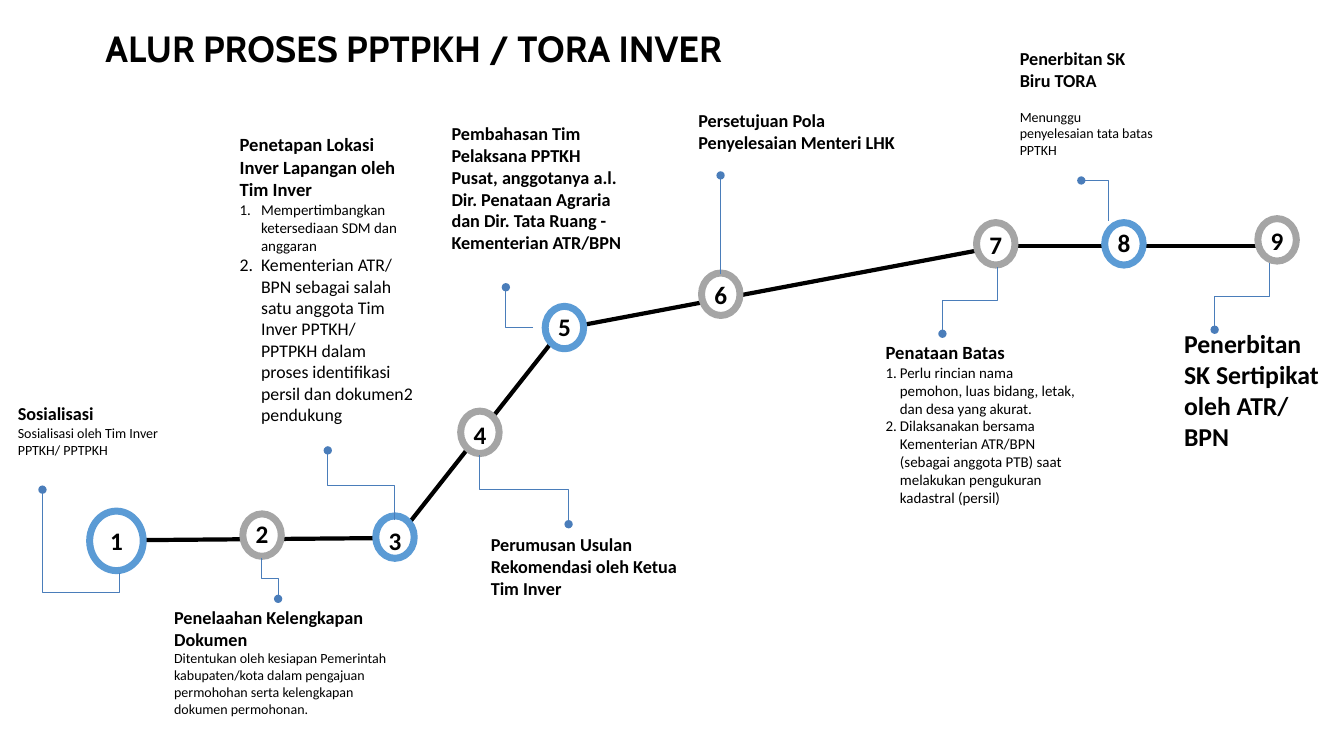
from dataclasses import dataclass
from typing import Optional

from lxml.etree import SubElement
from pptx import Presentation
from pptx.dml.color import RGBColor
from pptx.enum.shapes import MSO_CONNECTOR as Link, MSO_SHAPE as Preset
from pptx.enum.text import MSO_ANCHOR as Anchor, MSO_AUTO_SIZE as AutoSize, PP_ALIGN as Align
from pptx.oxml.ns import qn
from pptx.util import Cm, Pt

COLOURS = {"white": "FFFFFF", "black": "000000", "blue": "5B9BD5",
           "grey": "A5A5A5", "leader": "4A7DBA"}
TITLE_FRAME = {"word_wrap": True, "vertical_anchor": Anchor.MIDDLE,
               "margin_left": Cm(0.18), "margin_right": Cm(0.18),
               "margin_top": Cm(0.1), "margin_bottom": Cm(0.1)}
NOTE_FRAME = {"word_wrap": True, "auto_size": AutoSize.SHAPE_TO_FIT_TEXT,
              "margin_left": Cm(0.25), "margin_right": Cm(0.25),
              "margin_top": Cm(0.13), "margin_bottom": Cm(0.13)}
LABEL_WIDTH, LABEL_HEIGHT = 1.65, 1.04


@dataclass
class Line:
    text: str
    size: float = 13
    bold: bool = True
    indent: float = 0
    before: float = 0


@dataclass
class Leader:
    x1: float
    y1: float
    x2: float
    y2: float
    kind: str = "bentConnector3"
    bend: float = 0.5
    upright: bool = True


@dataclass
class Step:
    left: float
    top: float
    drop: float
    colour: str
    leader: Leader
    note_box: tuple[float, float, float, float]
    note: list[Line]
    width: float = 0.97
    height: float = 1.07


def detail(text: str, size: float = 10, indent: float = 0, before: float = 0) -> Line:
    return Line(text, size, False, indent, before)


ROUTE = [(25.1, 6.2, 32.13, 6.2), (3.61, 13.61, 9.47, 13.56),
         (14.2, 8.28, 24.59, 6.32), (10.31, 13.18, 13.89, 8.64)]

STEPS = [
    Step(2.26, 12.88, 0.23, "blue", Leader(3.02, 14.45, 1.07, 12.34, bend=-0.224),
         (0.2, 10.01, 4.93, 2.08),
         [Line("Sosialisasi"), detail("Sosialisasi oleh Tim Inver PPTKH/ PPTPKH")],
         width=1.35, height=1.5),
    Step(6.12, 12.95, -0.03, "grey", Leader(6.6, 14.05, 7.01, 15.09),
         (4.14, 15.14, 6.3, 3.23),
         [Line("Penelaahan Kelengkapan Dokumen"),
          detail("Ditentukan oleh kesiapan Pemerintah kabupaten/kota dalam pengajuan "
                 "permohohan serta kelengkapan dokumen permohonan.")]),
    Step(9.47, 13, 0.1, "blue", Leader(9.93, 13.11, 8.26, 11.35),
         (5.79, 3.23, 4.93, 8.13),
         [Line("Penetapan Lokasi Inver Lapangan oleh Tim Inver", 13.3),
          detail("Mempertimbangkan ketersediaan SDM dan anggaran", 10.7, 0.54),
          detail("Kementerian ATR/ BPN sebagai salah satu anggota Tim Inver PPTKH/ PPTPKH "
                 "dalam proses identifikasi persil dan dokumen2 pendukung", 12.7, 0.54)]),
    Step(11.61, 10.36, 0.08, "grey", Leader(12.09, 11.46, 14.33, 13.21),
         (12.12, 13.31, 5.38, 1.96),
         [Line("Perumusan Usulan Rekomendasi oleh Ketua Tim Inver")]),
    Step(13.74, 7.72, 0, "blue",
         Leader(13.44, 8.26, 12.75, 7.24, "bentConnector2", upright=False),
         (11.13, 2.95, 4.93, 3.68),
         [Line("Pembahasan Tim Pelaksana PPTKH Pusat, anggotanya a.l. Dir. Penataan "
               "Agraria dan Dir. Tata Ruang - Kementerian ATR/BPN")]),
    Step(17.68, 6.88, 0.03, "grey", Leader(18.16, 6.91, 18.16, 4.42),
         (17.35, 2.62, 5.77, 1.4),
         [Line("Persetujuan Pola Penyelesaian Menteri LHK")]),
    Step(24.61, 5.61, 0.03, "grey", Leader(25.15, 6.73, 23.75, 8.41),
         (22.07, 8.46, 5.36, 5.46),
         [Line("Penataan Batas", 13.3),
          detail("Perlu rincian nama pemohon, luas bidang, letak, dan desa yang akurat.",
                 10.7, 0.36),
          detail("Dilaksanakan bersama Kementerian ATR/BPN (sebagai anggota PTB) saat "
                 "melakukan pengukuran kadastral (persil)", 10.7, 0.36)]),
    Step(27.84, 5.61, 0, "blue", Leader(27.94, 5.56, 27.25, 4.55, "bentConnector2"),
         (25.45, 1.07, 3.91, 3.23),
         [Line("Penerbitan SK Biru TORA"),
          detail("Menunggu penyelesaian tata batas PPTKH", before=12)]),
    Step(31.7, 5.51, 0.03, "grey", Leader(32, 6.63, 30.61, 8.31),
         (29.59, 8.13, 3.91, 3.4),
         [Line("Penerbitan SK Sertipikat oleh ATR/ BPN", 18.4)]),
]


def rgb(name: str) -> RGBColor:
    return RGBColor.from_string(COLOURS[name])


def apply(target, values: dict) -> None:
    for name, value in values.items():
        setattr(target, name, value)


def write(frame, lines: list[Line], settings: dict, align=Align.LEFT, face="Calibri") -> None:
    apply(frame, settings)
    for index, line in enumerate(lines):
        paragraph = frame.add_paragraph() if index else frame.paragraphs[0]
        paragraph.alignment = align
        if line.before:
            paragraph.space_before = Pt(line.before)
        if line.indent:
            properties = paragraph._p.get_or_add_pPr()
            properties.set("marL", str(Cm(line.indent)))
            properties.set("indent", str(-Cm(line.indent)))
            SubElement(properties, qn("a:buFont"), typeface="+mj-lt")
            SubElement(properties, qn("a:buAutoNum"), type="arabicPeriod")
        run = paragraph.add_run()
        run.text = line.text
        apply(run.font, {"size": Pt(line.size), "bold": line.bold, "name": face})
        run.font.color.rgb = rgb("black")


def text_box(shapes, box: tuple, lines: list[Line], align=Align.LEFT) -> None:
    write(shapes.add_textbox(*map(Cm, box)).text_frame, lines, NOTE_FRAME, align)


def connect(shapes, kind, ends: tuple, colour: str, weight: float):
    link = shapes.add_connector(kind, *map(Cm, ends))
    link.line.color.rgb = rgb(colour)
    link.line.width = Pt(weight)
    SubElement(link._element.spPr, qn("a:effectLst"))
    return link


def draw_leader(shapes, leader: Leader) -> None:
    ends = (leader.x1, leader.y1, leader.x2, leader.y2)
    turn = 0
    if leader.upright:
        # Lay the elbow on its side about its centre, then turn it
        mid_x, mid_y = (leader.x1 + leader.x2) / 2, (leader.y1 + leader.y2) / 2
        down = leader.y2 > leader.y1
        half_long = abs(leader.y2 - leader.y1) / 2
        half_short = (leader.x1 - leader.x2) / 2 * (1 if down else -1)
        ends = (mid_x - half_long, mid_y - half_short, mid_x + half_long, mid_y + half_short)
        turn = 90 if down else 270
    link = connect(shapes, Link.ELBOW, ends, "leader", 0.75)
    properties = link._element.spPr
    if turn:
        properties.find(qn("a:xfrm")).set("rot", str(turn * 60000))
    geometry = properties.find(qn("a:prstGeom"))
    geometry.set("prst", leader.kind)
    if leader.kind == "bentConnector3":
        SubElement(geometry.find(qn("a:avLst")), qn("a:gd"), name="adj1",
                   fmla=f"val {round(leader.bend * 100000)}")
    SubElement(properties.find(qn("a:ln")), qn("a:tailEnd"), type="oval")


def add_preset(shapes, preset, box: tuple, outline: Optional[str] = None):
    shape = shapes.add_shape(preset, *map(Cm, box))
    shape.shadow.inherit = False
    shape.fill.solid()
    shape.fill.fore_color.rgb = rgb("white")
    if outline:
        shape.line.color.rgb = rgb(outline)
        shape.line.width = Pt(5)
    else:
        shape.line.fill.background()
    return shape


def draw_step(shapes, number: int, step: Step) -> None:
    add_preset(shapes, Preset.OVAL, (step.left, step.top, step.width, step.height), step.colour)
    label_left = step.left + (step.width - LABEL_WIDTH) / 2
    text_box(shapes, (label_left, step.top + step.drop, LABEL_WIDTH, LABEL_HEIGHT),
             [Line(str(number), 18)], Align.CENTER)
    draw_leader(shapes, step.leader)
    text_box(shapes, step.note_box, step.note)


def main() -> None:
    deck = Presentation()
    apply(deck, {"slide_width": Cm(33.87), "slide_height": Cm(19.05)})
    shapes = deck.slides.add_slide(deck.slide_layouts[6]).shapes

    # Title
    title = add_preset(shapes, Preset.RECTANGLE, (0.15, 0.36, 20.57, 1.96)).text_frame
    write(title, [Line("ALUR PROSES PPTPKH / TORA INVER", 26)], TITLE_FRAME,
          Align.CENTER, "Cabin")
    title.paragraphs[0].line_spacing = 0.7

    # Route behind the numbered steps
    for ends in ROUTE:
        connect(shapes, Link.STRAIGHT, ends, "black", 3)

    # Steps with their leaders and notes
    for number, step in enumerate(STEPS, 1):
        draw_step(shapes, number, step)

    deck.save("out.pptx")


if __name__ == "__main__":
    main()
